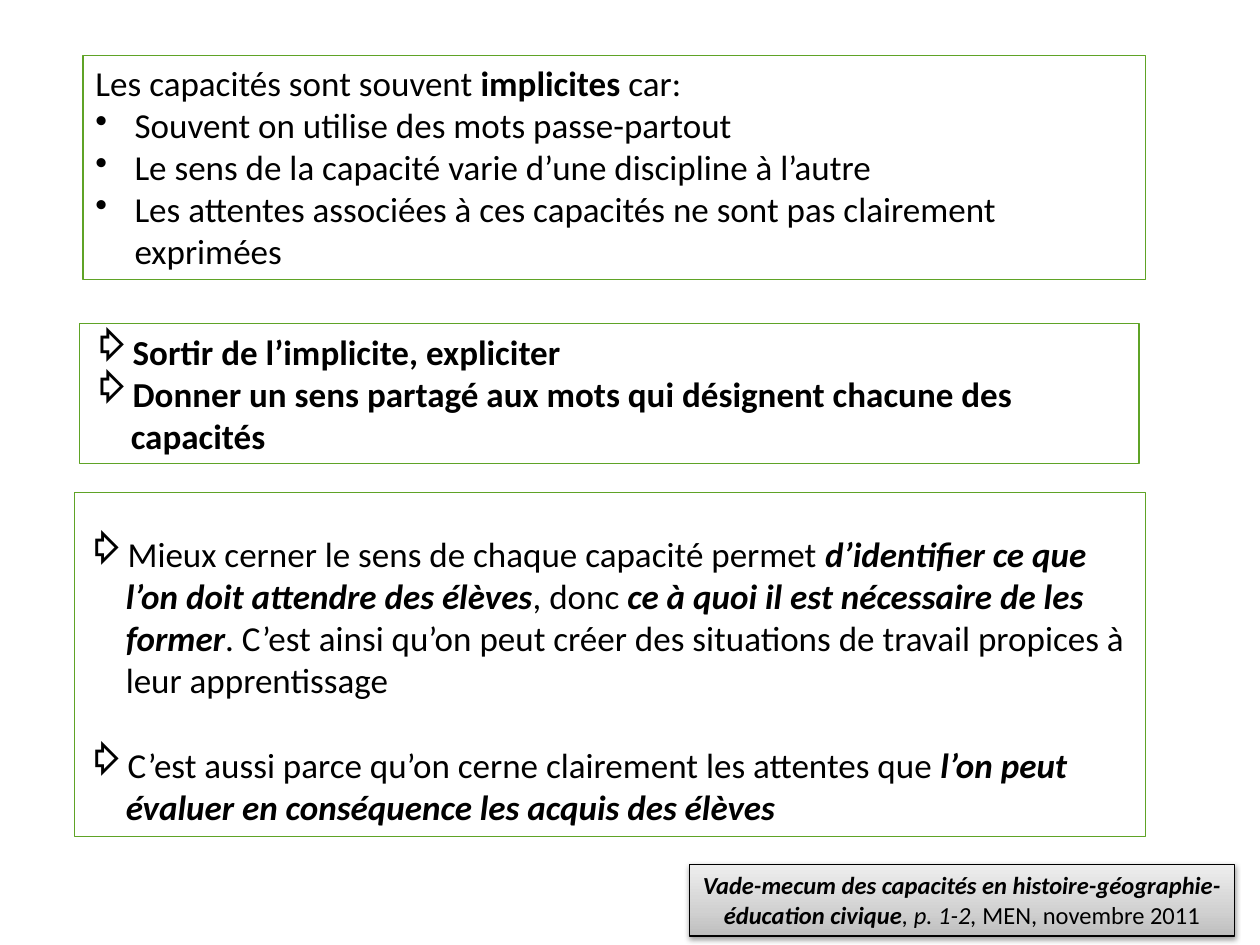
from lxml import etree
from pptx import Presentation
from pptx.dml.color import RGBColor
from pptx.enum.text import MSO_AUTO_SIZE, PP_ALIGN
from pptx.oxml.ns import qn
from pptx.util import Inches, Pt

CENTER = PP_ALIGN.CENTER
GROW = MSO_AUTO_SIZE.SHAPE_TO_FIT_TEXT
COLORS = {"text": "000000", "border": "5FA326", "source_border": "000000",
          "shadow": "000000"}
SOURCE_GRADIENT = [(0, "BDBDBD"), (35, "D1D1D1"), (100, "EEEEEE")]
FONT = "Calibri"
DOT, ARROW = "•", "⇨"
INDENT = Inches(0.31)
BLANK_LAYOUT = 6


def sub(parent, tag, **attributes):
    return etree.SubElement(parent, qn(tag), {k: str(v) for k, v in attributes.items()})


def add_text(paragraph, text, size=20, bold=False, italic=False, color="text"):
    run = paragraph.add_run()
    run.text = text
    font = run.font
    font.name, font.size = FONT, Pt(size)
    font.bold, font.italic = bold, italic
    font.color.rgb = RGBColor.from_string(COLORS[color])


def set_bullet(paragraph, bullet):
    properties = paragraph._p.get_or_add_pPr()
    properties.set("marL", str(INDENT))
    properties.set("indent", str(-INDENT))
    sub(properties, "a:buChar", char=bullet)


def add_frame(slide, box, border="border"):
    """Add an outlined text frame that fills the given box."""
    frame = slide.shapes.add_textbox(*(Inches(length) for length in box))
    frame.line.color.rgb = RGBColor.from_string(COLORS[border])
    frame.line.width = Pt(0.75)
    frame.text_frame.word_wrap = True
    frame.text_frame.auto_size = GROW
    return frame


def add_statements(slide, box, statements, top_inset=0.05, gap=0):
    """Write (bullet, [(text, format), ...]) statements in a frame."""
    text_frame = add_frame(slide, box).text_frame
    text_frame.margin_top = Inches(top_inset)
    for number, (bullet, parts) in enumerate(statements):
        paragraph = text_frame.add_paragraph() if number else text_frame.paragraphs[0]
        if number and gap:
            paragraph.space_before = Pt(gap)
        if bullet:
            set_bullet(paragraph, bullet)
        for text, style in parts:
            add_text(paragraph, text, **style)


def add_source(slide, box, parts):
    """Add the shaded source reference."""
    frame = add_frame(slide, box, border="source_border")
    # Gradient, darkest at the bottom
    frame.fill.gradient()
    frame.fill.gradient_angle = 90
    properties = frame._element.spPr
    stops = properties.find(qn("a:gradFill")).find(qn("a:gsLst"))
    for stop in list(stops):
        stops.remove(stop)
    for percent, color in SOURCE_GRADIENT:
        sub(sub(stops, "a:gs", pos=percent * 1000), "a:srgbClr", val=color)
    # Soft shadow below
    shadow = sub(sub(properties, "a:effectLst"), "a:outerShdw", blurRad=Pt(3.1),
                 dist=Pt(1.6), dir=90 * 60000, rotWithShape=0)
    sub(sub(shadow, "a:srgbClr", val=COLORS["shadow"]), "a:alpha", val=38000)

    paragraph = frame.text_frame.paragraphs[0]
    paragraph.alignment = CENTER
    for text, style in parts:
        add_text(paragraph, text, size=14, **style)


def main():
    presentation = Presentation()
    presentation.slide_width, presentation.slide_height = Inches(10), Inches(7.5)
    slide = presentation.slides.add_slide(presentation.slide_layouts[BLANK_LAYOUT])

    plain, bold, italic = {}, {"bold": True}, {"italic": True}
    strong = {"bold": True, "italic": True}

    # Why the skills stay implicit
    add_statements(slide, (0.66, 0.44, 8.43, 1.78), [
        (None, [("Les capacités sont souvent ", plain), ("implicites", bold),
                (" car:", plain)]),
        (DOT, [("Souvent on utilise des mots passe-partout", plain)]),
        (DOT, [("Le sens de la capacité varie d’une discipline à l’autre", plain)]),
        (DOT, [("Les attentes associées à ces capacités ne sont pas clairement "
                "exprimées", plain)]),
    ])

    # Benefits for teaching and assessment
    add_statements(slide, (0.59, 3.91, 8.5, 2.73), [
        (ARROW, [("Mieux cerner le sens de chaque capacité permet ", plain),
                 ("d’identifier ce que l’on doit attendre des élèves", strong),
                 (", donc ", plain),
                 ("ce à quoi il est nécessaire de les former", strong),
                 (". C’est ainsi qu’on peut créer des situations de travail "
                  "propices à leur apprentissage", plain)]),
        (ARROW, [("C’est aussi parce qu’on cerne clairement les attentes que ", plain),
                 ("l’on peut évaluer en conséquence les acquis des élèves", strong)]),
    ], top_inset=0.32, gap=24.4)

    # What to do about it
    add_statements(slide, (0.63, 2.57, 8.41, 1.11), [
        (ARROW, [("Sortir de l’implicite, expliciter", bold)]),
        (ARROW, [("Donner un sens partagé aux mots qui désignent chacune des "
                  "capacités", bold)]),
    ])

    add_source(slide, (5.47, 6.86, 4.33, 0.57), [
        ("Vade-mecum des capacités en histoire-géographie-éducation civique", strong),
        (", p. 1-2, ", italic),
        ("MEN, novembre 2011", plain),
    ])

    presentation.save("out.pptx")


if __name__ == "__main__":
    main()
